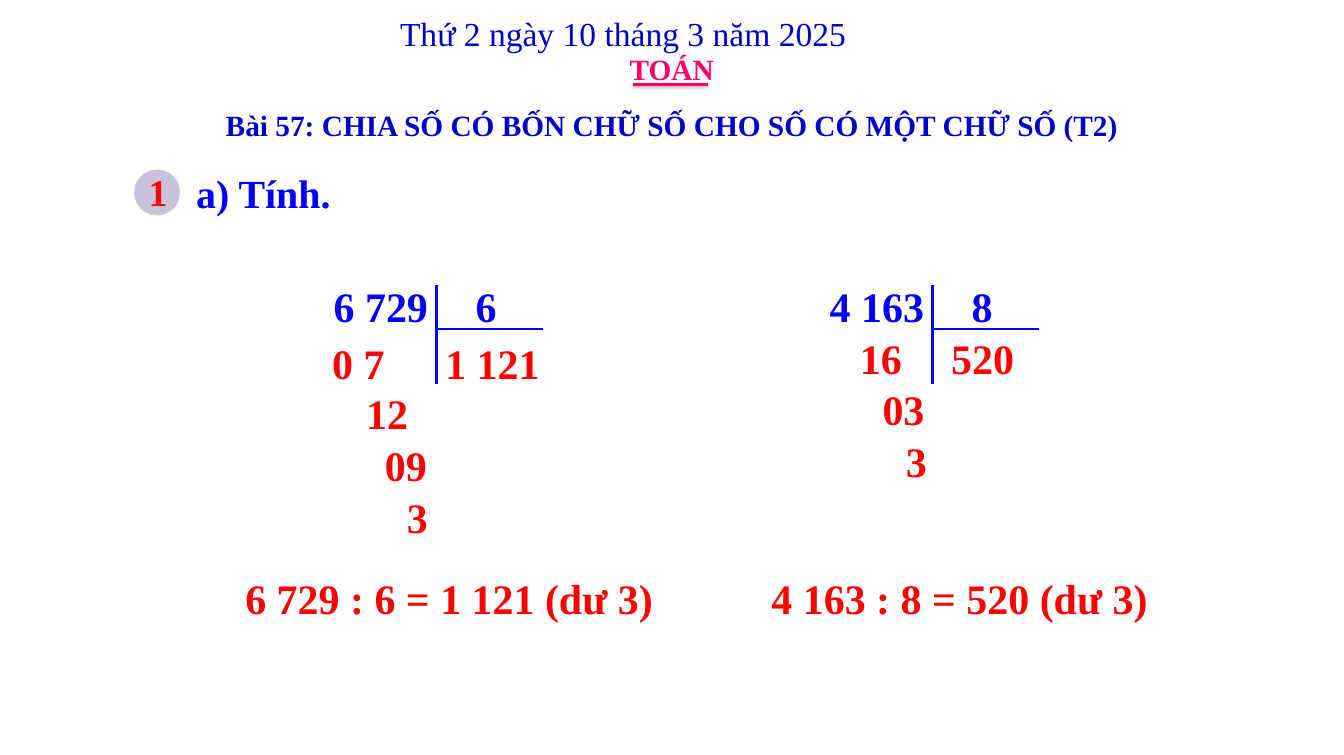
"""Builds a maths lesson slide with two worked long divisions."""
from lxml import etree
from pptx import Presentation, util as u
from pptx.dml.color import RGBColor
from pptx.enum import shapes, text
from pptx.oxml import parse_xml
from pptx.oxml.ns import nsdecls, qn

BLUE = RGBColor(0x00, 0x00, 0xFF)
NAVY = RGBColor(0x00, 0x00, 0xCC)
RED = RGBColor(0xFF, 0x00, 0x00)
PINK = RGBColor(0xFF, 0x00, 0x66)
LILAC = RGBColor(0xCC, 0xC1, 0xDA)
SHADOW = (
    f'<a:effectLst {nsdecls("a")}><a:outerShdw blurRad="39400" dist="20300" dir="5400000">'
    '<a:srgbClr val="000000"><a:alpha val="38000"/></a:srgbClr></a:outerShdw></a:effectLst>'
)

prs = Presentation()
prs.slide_width, prs.slide_height = u.Inches(17.8), u.Inches(10)
s = prs.slides.add_slide(prs.slide_layouts[6])
COL, ROW = prs.slide_width / 100, prs.slide_height / 100


def add_text(words, x, y, w, h=7.7, size=40, color=RED, bold=True, wrap=False):
    sp = s.shapes.add_textbox(int(x * COL), int(y * ROW), int(w * COL), int(h * ROW))
    tf = sp.text_frame
    tf.word_wrap = wrap
    tf.auto_size = text.MSO_AUTO_SIZE.SHAPE_TO_FIT_TEXT
    p = tf.paragraphs[0]
    p.text = words
    p.font.name, p.font.size, p.font.bold = "Times New Roman", u.Pt(size), bold
    p.font.color.rgb = color
    return tf


def add_line(x1, y1, x2, y2, color, width):
    sp = s.shapes.add_connector(
        shapes.MSO_CONNECTOR.STRAIGHT, int(x1 * COL), int(y1 * ROW), int(x2 * COL), int(y2 * ROW))
    sp.line.color.rgb, sp.line.width = color, u.Pt(width)
    return sp._element.spPr


add_text("TOÁN", 46.29, 6.3, 7.47, 5.7, 28, PINK)
add_line(47.08, 11.2, 52.7, 11.2, PINK, 2).append(parse_xml(SHADOW))

sp = s.shapes.add_shape(
    shapes.MSO_SHAPE.OVAL, int(10.06 * COL), int(22.6 * ROW), int(5.8 * ROW), int(5.8 * ROW))
sp.shadow.inherit = False
sp.fill.solid()
sp.fill.fore_color.rgb = sp.line.color.rgb = LILAC
sp.line.width = u.Pt(2)
add_text("1", 10.51, 21.8, 2.53, 7.1, 36)
add_text("a) Tính.", 14.04, 21.8, 11.24, 7.4, 38, BLUE)

tf = add_text("Bài 57: CHIA SỐ CÓ BỐN CHỮ SỐ CHO SỐ CÓ MỘT CHỮ SỐ (T2)",
              15.84, 13.4, 68.26, 6.3, 28, NAVY, wrap=True)
tf.margin_left = tf.margin_right = u.Inches(0.16)
tf.margin_top = tf.margin_bottom = u.Inches(0.08)
tf.paragraphs[0].alignment = text.PP_ALIGN.CENTER

divisions = [
    (32.47, "6 729", "6", [("1 121", 0.11, 44.2, 8.2), ("0 7", -8.31, 44.2, 5.06),
                           ("12", -5.78, 50.8, 4.27), ("09", -4.38, 57.7, 4.27),
                           ("3", -2.75, 64.6, 2.7)]),
    (69.38, "4 163", "8", [("520", 0.84, 43.6, 5.84), ("16", -5.95, 43.6, 4.27),
                           ("03", -4.27, 50.3, 4.27), ("3", -2.53, 57.2, 2.7)]),
]
for bar, dividend, divisor, steps in divisions:
    add_text(dividend, bar - 8.2, 36.7, 8.2, color=BLUE)
    for ends in ((bar, 37.8, bar, 50.8), (bar + 7.9, 43.6, bar, 43.6)):
        etree.SubElement(add_line(*ends, BLUE, 2.25), qn("a:effectLst"))
    add_text(divisor, bar + 2.36, 36.7, 2.7, color=BLUE)
    for digits, dx, y, w in steps:
        add_text(digits, bar + dx, y, w)

add_text("6 729 : 6 = 1 121 (dư 3)", 17.7, 75.3, 31.8)
add_text("4 163 : 8 = 520 (dư 3)", 56.85, 75.3, 29.44)
add_text("Thứ 2 ngày 10 tháng 3 năm 2025", 29.21, 1.2, 38.09, 6.4, 32, NAVY, bold=False, wrap=True)

prs.save("out.pptx")
